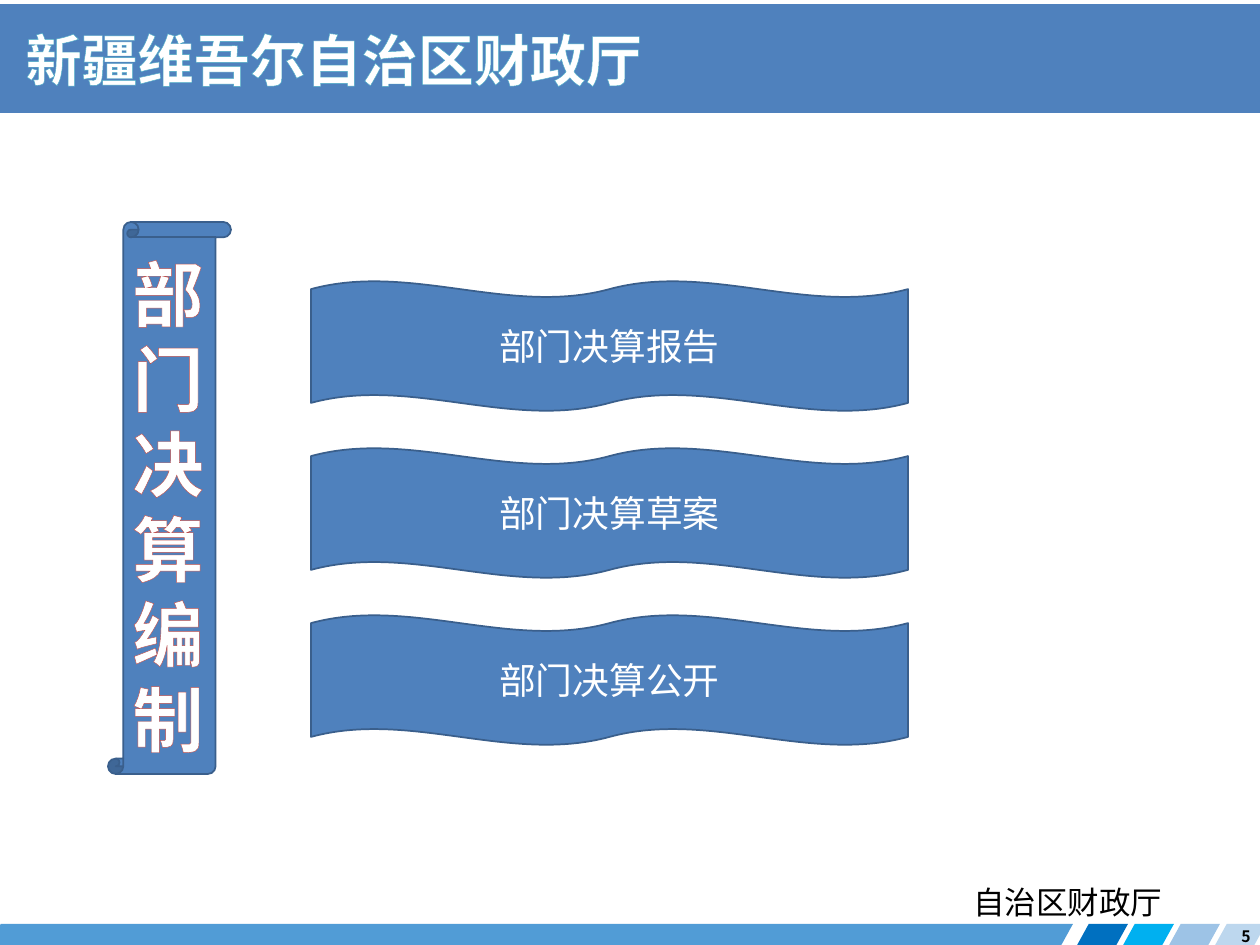
from dataclasses import dataclass

import lxml.etree
import pptx
import pptx.dml.color
import pptx.enum.shapes
import pptx.enum.text
import pptx.oxml.ns
import pptx.util

EMU_PER_PX = 914400 / 126
SHAPE = pptx.enum.shapes.MSO_SHAPE
ALIGN = pptx.enum.text.PP_ALIGN
ANCHOR = pptx.enum.text.MSO_ANCHOR
qn = pptx.oxml.ns.qn


@dataclass(frozen=True)
class Theme:
    blue: str = "4F81BD"
    edge: str = "3A5F8C"
    white: str = "FFFFFF"
    black: str = "000000"
    title_edge: str = "4BACC6"
    scroll_edge: str = "C0504D"
    footer: str = "519CD6"
    footer_steps: tuple = ("0070C0", "00B0F0", "9DC3E6", "BDD7EE")
    cjk: str = "Noto Sans CJK SC"
    wave_font: str = "Noto Sans CJK JP"
    scroll_font: str = "Calibri"
    title_size: float = 32
    scroll_size: float = 40.5
    wave_size: float = 21
    office_size: float = 18
    number_size: float = 9


THEME = Theme()


def px(length):
    return pptx.util.Emu(round(length * EMU_PER_PX))


def rgb(value):
    return pptx.dml.color.RGBColor.from_string(value)


def write(shape, text, font, size, color, bold=False, align=ALIGN.LEFT,
          anchor=ANCHOR.TOP, wrap=True):
    """Put one styled paragraph in a shape and return its run."""
    frame = shape.text_frame
    frame.text = text
    frame.word_wrap = wrap
    frame.vertical_anchor = anchor
    paragraph = frame.paragraphs[0]
    paragraph.alignment = align
    run = paragraph.runs[0]
    run.font.name = font
    run.font.size = pptx.util.Pt(size)
    run.font.bold = bold
    run.font.color.rgb = rgb(color)
    east_asian = lxml.etree.Element(qn("a:ea"), typeface=font)
    run.font._element.find(qn("a:latin")).addnext(east_asian)
    return run


def outline(run, color, points):
    """Draw a line around the letters of a run."""
    line = lxml.etree.Element(qn("a:ln"), w=str(pptx.util.Pt(points)))
    fill = lxml.etree.SubElement(line, qn("a:solidFill"))
    lxml.etree.SubElement(fill, qn("a:srgbClr"), val=color)
    run.font._element.insert(0, line)


def add_shape(slide, kind, box, fill, edge=None):
    shape = slide.shapes.add_shape(kind, *map(px, box))
    shape.shadow.inherit = False
    shape.fill.solid()
    shape.fill.fore_color.rgb = rgb(fill)
    if edge:
        shape.line.color.rgb = rgb(edge)
        shape.line.width = pptx.util.Pt(1)
    else:
        shape.line.fill.background()
    return shape


def add_text(slide, box, text, font, size, color, **style):
    label = slide.shapes.add_textbox(*map(px, box))
    return write(label, text, font, size, color, **style)


def add_header(slide, text):
    add_shape(slide, SHAPE.RECTANGLE, (0, 4, 1261, 109), THEME.blue)
    title = slide.shapes.title
    title.left, title.top, title.width, title.height = map(px, (13, 19, 713, 81))
    run = write(title, text, THEME.cjk, THEME.title_size, THEME.white, bold=True)
    outline(run, THEME.title_edge, 0.8)
    # The title sits in front of its band
    slide.shapes.element.append(title.element)


def add_footer(slide, office, number):
    add_text(slide, (961, 877, 214, 50), office, THEME.cjk,
             THEME.office_size, THEME.black, wrap=False)
    bars = [(-13, 1086, THEME.footer)]
    bars += [(1075 + 46 * i, 53, color) for i, color in enumerate(THEME.footer_steps)]
    for left, width, color in bars:
        bar = add_shape(slide, SHAPE.PARALLELOGRAM, (left, 924, width, 25), color)
        bar.adjustments[0] = 0.55
    add_text(slide, (969, 911, 294, 50), number, THEME.cjk, THEME.number_size,
             THEME.black, bold=True, align=ALIGN.RIGHT, anchor=ANCHOR.MIDDLE)


def add_scroll(slide, text):
    add_shape(slide, SHAPE.VERTICAL_SCROLL, (108, 222, 123, 552),
              THEME.blue, THEME.edge)
    # The narrow box leaves room for one character a line
    run = add_text(slide, (112, 244, 112, 528), text, THEME.scroll_font,
                   THEME.scroll_size, THEME.white, bold=True, align=ALIGN.CENTER)
    outline(run, THEME.scroll_edge, 0.52)


def add_waves(slide, topics):
    for i, topic in enumerate(topics):
        wave = add_shape(slide, SHAPE.DOUBLE_WAVE, (311, 281 + 167 * i, 597, 130),
                         THEME.blue, THEME.edge)
        write(wave, topic, THEME.wave_font, THEME.wave_size, THEME.white,
              align=ALIGN.CENTER, anchor=ANCHOR.MIDDLE)


def main():
    deck = pptx.Presentation()
    deck.slide_width, deck.slide_height = px(1260), px(945)
    slide = deck.slides.add_slide(deck.slide_layouts.get_by_name("Title Only"))
    add_header(slide, "新疆维吾尔自治区财政厅")
    add_footer(slide, "自治区财政厅", "5")
    add_scroll(slide, "部门决算编制")
    add_waves(slide, ["部门决算报告", "部门决算草案", "部门决算公开"])
    deck.save("out.pptx")


if __name__ == "__main__":
    main()
